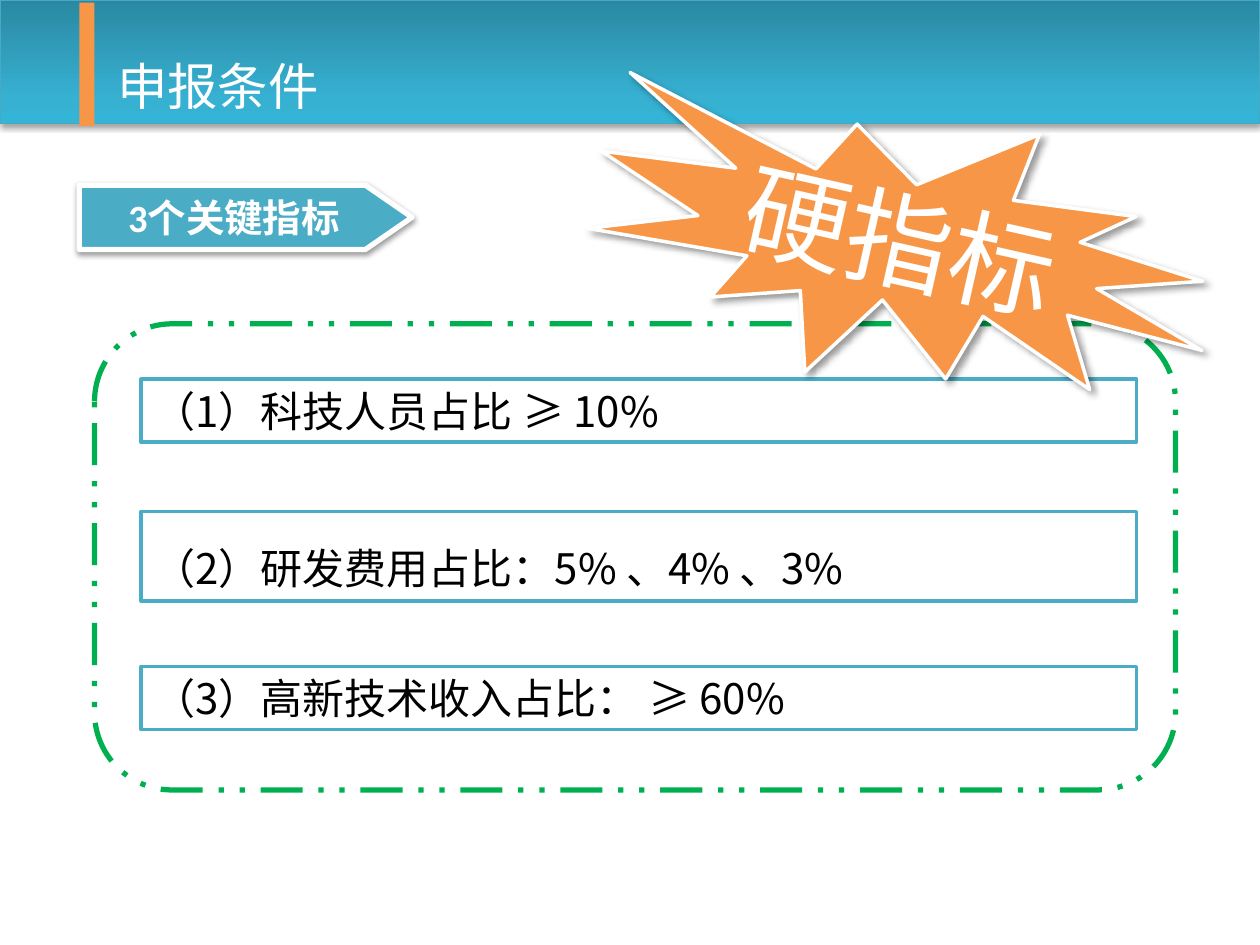
from copy import deepcopy

from lxml import etree
from pptx import Presentation
from pptx.dml.color import RGBColor
from pptx.enum.dml import MSO_LINE
from pptx.enum.shapes import MSO_SHAPE
from pptx.enum.text import MSO_ANCHOR, MSO_AUTO_SIZE, PP_ALIGN
from pptx.oxml.ns import qn
from pptx.util import Inches, Pt

RECT, ROUND = MSO_SHAPE.RECTANGLE, MSO_SHAPE.ROUNDED_RECTANGLE
ARROW, BURST = MSO_SHAPE.PENTAGON, MSO_SHAPE.EXPLOSION1
DASH = MSO_LINE.DASH_DOT_DOT
LEFT, CENTER = PP_ALIGN.LEFT, PP_ALIGN.CENTER
TOP, MIDDLE = MSO_ANCHOR.TOP, MSO_ANCHOR.MIDDLE
GROW, FIXED = MSO_AUTO_SIZE.SHAPE_TO_FIT_TEXT, MSO_AUTO_SIZE.NONE

WHITE = RGBColor(0xFF, 0xFF, 0xFF)
BLACK = RGBColor(0, 0, 0)
TEAL = RGBColor(0x4B, 0xAC, 0xC6)
EDGE = RGBColor(0x46, 0xAA, 0xC5)
GREEN = RGBColor(0x00, 0xB0, 0x50)
ORANGE = RGBColor(0xF7, 0x96, 0x46)
FADE = [(0, RGBColor(0x2A, 0x88, 0xA2)), (0.8, RGBColor(0x37, 0xB1, 0xD2)),
        (1, RGBColor(0x34, 0xB4, 0xD6))]
SANS, LATIN = "Noto Sans CJK SC", "Calibri"

# Content
TITLE = "申报条件"
LABEL = "3个关键指标"
STAMP = "硬指标"
RULES = [  # text, top, height, line spacing
    ("（1）科技人员占比 ≥ 10%", 3.01, 0.5, 1),
    ("（2）研发费用占比：5% 、4% 、3%", 4.06, 0.71, 1.5),
    ("（3）高新技术收入占比： ≥ 60%", 5.29, 0.5, 1),
]


def add_box(kind, box, fill=None, line=None, width=1):
    shape = slide.shapes.add_shape(kind, *map(Inches, box))
    shape.shadow.inherit = False
    if fill is None:
        shape.fill.background()
    else:
        shape.fill.solid()
        shape.fill.fore_color.rgb = fill
    if line is None:
        shape.line.fill.background()
    else:
        shape.line.color.rgb = line
        shape.line.width = Pt(width)
    return shape


def set_text(shape, text, size, color, align=CENTER, anchor=MIDDLE, font=SANS):
    frame = shape.text_frame
    frame.text = text
    frame.word_wrap = True
    frame.vertical_anchor = anchor
    para = frame.paragraphs[0]
    para.alignment = align
    run = para.runs[0]
    run.font.size = Pt(size)
    run.font.name = font
    run.font.color.rgb = color
    east = etree.SubElement(run.font._element, qn("a:ea"))
    east.set("typeface", SANS)
    return para


def add_shade(shape, alpha, blur, dist, angle):
    effect = shape._element.spPr.find(qn("a:effectLst"))
    shade = etree.SubElement(effect, qn("a:outerShdw"), blurRad=str(Pt(blur)),
                             dist=str(Pt(dist)), dir=str(angle * 60000),
                             rotWithShape="0")
    color = etree.SubElement(shade, qn("a:srgbClr"), val="000000")
    etree.SubElement(color, qn("a:alpha"), val=str(alpha * 1000))


prs = Presentation()
prs.slide_width, prs.slide_height = Inches(10), Inches(7.5)
slide = prs.slides.add_slide(prs.slide_layouts[5])

# Label arrow
label = add_box(ARROW, (0.63, 1.47, 2.64, 0.51), TEAL, WHITE, 3)
label.adjustments[0] = 0.724
add_shade(label, 38, 3.1, 1.6, 90)
set_text(label, LABEL, 22, WHITE, font=LATIN).runs[0].font.bold = True

# Rule boxes and their dashed frame
for text, top, height, space in RULES:
    rule = add_box(RECT, (1.12, top, 7.9, height), WHITE, TEAL, 2)
    set_text(rule, text, 24, BLACK, LEFT, TOP).line_spacing = space
    rule.text_frame.auto_size = GROW
frame = add_box(ROUND, (0.75, 2.57, 8.58, 3.7), None, GREEN, 3)
frame.line.dash_style = DASH

# Banner with a three-stop fade
banner = add_box(RECT, (0, 0, 10, 0.98), WHITE, EDGE, 0.75)
banner.fill.gradient()
banner.fill.gradient_angle = 270
stops = banner._element.spPr.find(".//" + qn("a:gsLst"))
stops.insert(1, deepcopy(stops[0]))
for stop, (place, color) in zip(banner.fill.gradient_stops, FADE):
    stop.position = place
    stop.color.rgb = color
add_shade(banner, 35, 3.1, 1.8, 90)

# Title, lifted above the banner
title = slide.shapes.title
title.left, title.top, title.width, title.height = map(
    Inches, (0.83, 0.44, 3.39, 0.47))
set_text(title, TITLE, 28.8, WHITE, LEFT)
title.text_frame.auto_size = FIXED
banner._element.addnext(title._element)

# Accent bar and stamp
add_box(RECT, (0.63, 0.02, 0.12, 0.98), ORANGE)
stamp = add_box(BURST, (4.66, 0.85, 5, 2.25), ORANGE, WHITE, 2)
stamp.rotation = 12.8
add_shade(stamp, 40, 4, 3, 45)
set_text(stamp, STAMP, 60, WHITE)

prs.save("out.pptx")
